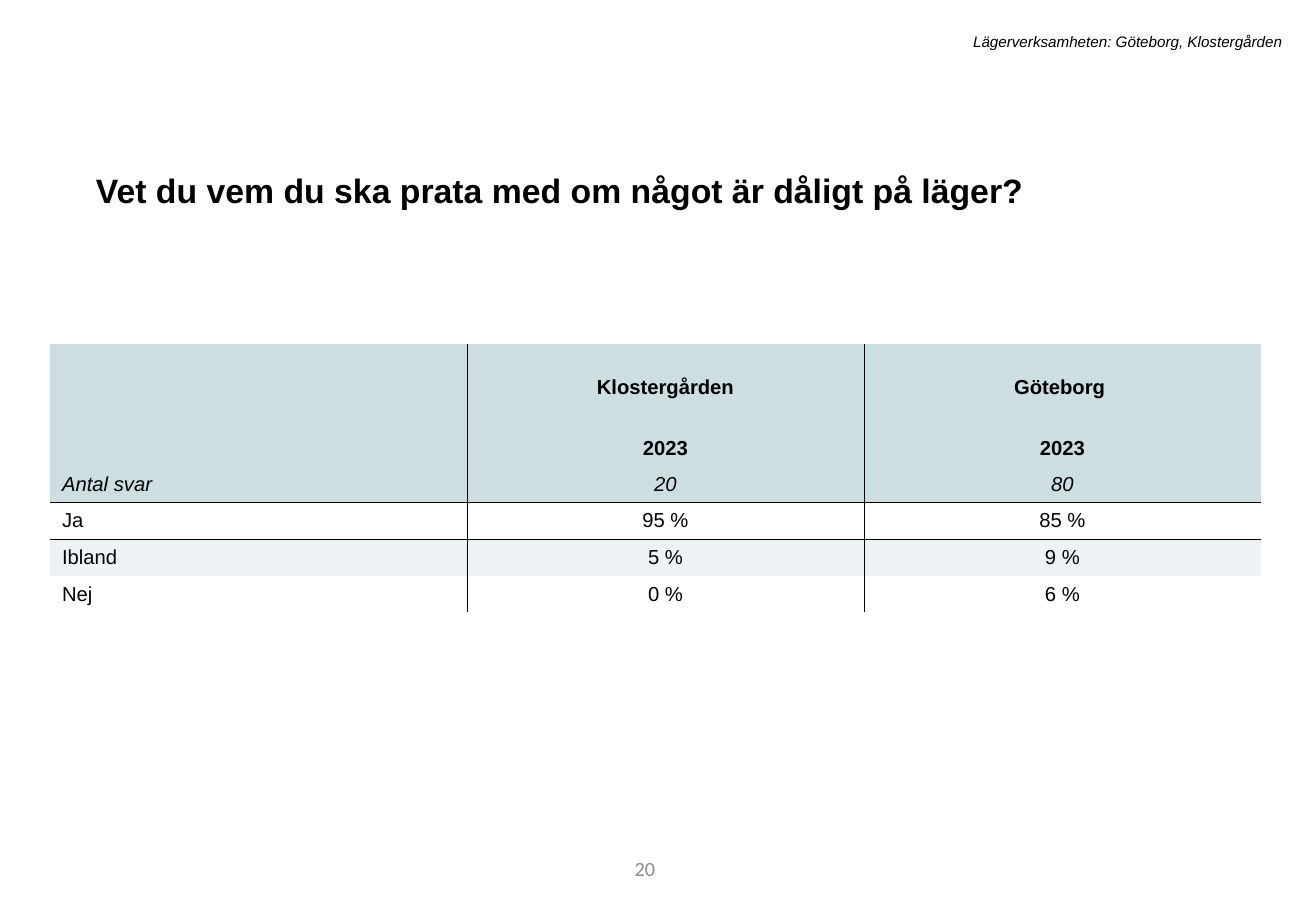
from lxml.etree import SubElement
from pptx import Presentation
from pptx.dml.color import RGBColor
from pptx.enum.text import MSO_ANCHOR, PP_ALIGN
from pptx.oxml.ns import qn
from pptx.util import Pt

PX = 7526
COLORS = {"ink": "000000", "page": "8C8C8C", "header": "CCDEE1", "band": "EDF3F4"}
NO_TABLE_STYLE = "{2D5ABB26-0587-4C30-8999-92F81FD0307C}"
COLUMN_WIDTHS = [417, 397, 397]
ROW_HEIGHTS = [61, 61, 36, 36, 37, 36]
ANSWERS = [
    ["", "Klostergården", "Göteborg "],
    ["", "2023", "2023"],
    ["Antal svar", "20", "80"],
    ["Ja", "95 %", "85 %"],
    ["Ibland", "5 %", "9 %"],
    ["Nej", "0 %", "6 %"],
]
COUNT_ROW = 2
BAND_ROW = 4


def style_font(font, size, name="Arial", color="ink", bold=False, italic=False):
    """Set the look of a font."""
    font.name, font.size = name, Pt(size)
    font.bold, font.italic = bold, italic
    font.color.rgb = RGBColor.from_string(COLORS[color])


def add_text(slide, box, text, size, align=PP_ALIGN.LEFT, anchor=MSO_ANCHOR.TOP, **look):
    """Write one paragraph in a box and return the paragraph."""
    frame = slide.shapes.add_textbox(*(side * PX for side in box)).text_frame
    frame.word_wrap = True
    frame.vertical_anchor = anchor
    line = frame.paragraphs[0]
    line.text, line.alignment = text, align
    style_font(line.font, size, **look)
    return line


def add_border(cell, position, side):
    """Draw a hairline on one side of a cell."""
    properties = cell._tc.get_or_add_tcPr()
    border = SubElement(properties, qn(f"a:{side}"), w=str(Pt(0.25)))
    fill = SubElement(border, qn("a:solidFill"))
    SubElement(fill, qn("a:srgbClr"), val=COLORS["ink"])
    properties.insert(position, border)


def fill_cell(cell, row, column, text):
    """Write, border and colour one answer cell."""
    is_heading = row < COUNT_ROW
    cell.vertical_anchor = MSO_ANCHOR.BOTTOM if is_heading else MSO_ANCHOR.MIDDLE
    line = cell.text_frame.paragraphs[0]
    line.text = text
    line.alignment = PP_ALIGN.CENTER if column else PP_ALIGN.LEFT
    style_font(line.font, 12, bold=is_heading, italic=row == COUNT_ROW)
    sides = {
        "lnL": column > 0,
        "lnR": column < len(COLUMN_WIDTHS) - 1,
        "lnT": row == COUNT_ROW + 1,
        "lnB": row == COUNT_ROW,
    }
    for position, side in enumerate(side for side, drawn in sides.items() if drawn):
        add_border(cell, position, side)
    if row <= COUNT_ROW or row == BAND_ROW:
        cell.fill.solid()
        shade = "band" if row == BAND_ROW else "header"
        cell.fill.fore_color.rgb = RGBColor.from_string(COLORS[shade])
    else:
        cell.fill.background()


def add_answer_table(slide, left, top):
    """Place the table of answers with its corner at left, top."""
    table = slide.shapes.add_table(
        len(ROW_HEIGHTS), len(COLUMN_WIDTHS), left * PX, top * PX,
        sum(COLUMN_WIDTHS) * PX, sum(ROW_HEIGHTS) * PX,
    ).table
    table.first_row = table.horz_banding = False
    table._tbl.tblPr.find(qn("a:tableStyleId")).text = NO_TABLE_STYLE
    for column, width in zip(table.columns, COLUMN_WIDTHS):
        column.width = width * PX
    for row, height in zip(table.rows, ROW_HEIGHTS):
        row.height = height * PX
    for row, texts in enumerate(ANSWERS):
        for column, text in enumerate(texts):
            fill_cell(table.cell(row, column), row, column, text)


def add_question(slide, box):
    """Write the survey question as the heading."""
    question = add_text(
        slide, box, "Vet du vem du ska prata med om något är dåligt på läger?", 20, bold=True
    )
    question.line_spacing = 1.2
    question.space_before = Pt(10)


def main():
    """Build and save the survey slide."""
    deck = Presentation()
    deck.slide_width, deck.slide_height = 1316 * PX, 911 * PX
    slide = deck.slides.add_slide(deck.slide_layouts[6])
    add_text(slide, (371, 844, 296, 49), "20", 12, PP_ALIGN.RIGHT, MSO_ANCHOR.MIDDLE,
             name="Calibri", color="page")
    add_question(slide, (84, 156, 1142, 57))
    add_text(slide, (217, 26, 1077, 30), "Lägerverksamheten: Göteborg, Klostergården", 9,
             PP_ALIGN.RIGHT, italic=True)
    add_answer_table(slide, 50, 344)
    deck.save("out.pptx")


if __name__ == "__main__":
    main()
